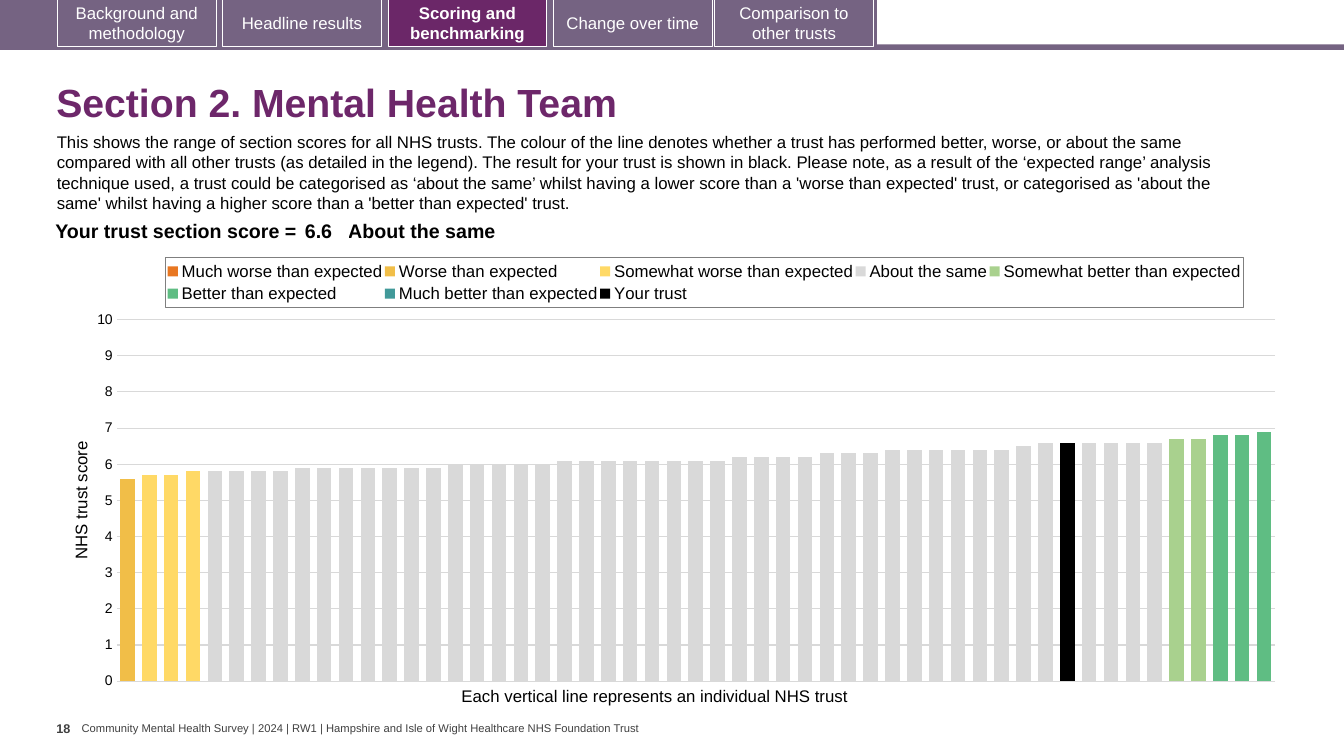
import copy

from pptx import Presentation
from pptx import util as u
from pptx.chart.data import CategoryChartData
from pptx.dml.color import RGBColor
from pptx.enum import chart as kinds, shapes, text
from pptx.oxml import parse_xml
from pptx.oxml.ns import nsdecls

COLUMNS, ROWS = 160, 90
CELL = u.Inches(13.33) / COLUMNS
LEFT, CENTRE, RIGHT = text.PP_ALIGN.LEFT, text.PP_ALIGN.CENTER, text.PP_ALIGN.RIGHT
TOP, MIDDLE = text.MSO_ANCHOR.TOP, text.MSO_ANCHOR.MIDDLE
TABS = {"Background and methodology": 6.84, "Headline results": 26.52, "Scoring and benchmarking": 46.2,
        "Change over time": 65.88, "Comparison to other trusts": 85.08}
ACTIVE_TAB = "Scoring and benchmarking"
INTRO = (
    "This shows the range of section scores for all NHS trusts. The colour of the line denotes whether a trust "
    "has performed better, worse, or about the same compared with all other trusts (as detailed in the legend). "
    "The result for your trust is shown in black. Please note, as a result of the ‘expected range’ analysis "
    "technique used, a trust could be categorised as ‘about the same’ whilst having a lower score than a 'worse "
    "than expected' trust, or categorised as 'about the same' whilst having a higher score than a 'better than "
    "expected' trust.")
TRUSTS = 53
BANDS = [
    ("Much worse than expected", "E87722", 0, []),
    ("Worse than expected", "F1BE48", 0, [(5.6, 1)]),
    ("Somewhat worse than expected", "FFD966", 1, [(5.7, 2), (5.8, 1)]),
    ("About the same", "D9D9D9", 4, [(5.8, 4), (5.9, 7), (6, 5), (6.1, 8), (6.2, 4), (6.3, 3),
                                     (6.4, 6), (6.5, 1), (6.6, 6)]),
    ("Somewhat better than expected", "A9D18E", 48, [(6.7, 2)]),
    ("Better than expected", "5FBD83", 50, [(6.8, 2), (6.9, 1)]),
    ("Much better than expected", "419999", 53, []),
    ("Your trust", "000000", 43, [(6.6, 1)]),
]


def colour(value):
    """Turn a hex string into a colour."""
    return RGBColor.from_string(value)


def place(box, left, top, width, height):
    """Convert grid lengths inside a box to slide lengths."""
    return [u.Emu(round(n * CELL)) for n in (box[0] + left, box[1] + top, width, height)]


def style(font, size, shade="000000", bold=False):
    """Set a font's face, size, colour and weight."""
    font.name, font.size, font.bold = "Arial", u.Pt(size), bold
    font.color.rgb = colour(shade)


def write(frame, words, size=12, shade="000000", bold=False, align=LEFT, anchor=TOP, wrap=True,
          insets=(0.1, 0.05), spacing=None):
    """Fill a text frame with one formatted paragraph."""
    frame.word_wrap, frame.vertical_anchor = wrap, anchor
    frame.margin_left = frame.margin_right = u.Inches(insets[0])
    frame.margin_top = frame.margin_bottom = u.Inches(insets[1])
    para = frame.paragraphs[0]
    para.alignment, para.line_spacing = align, spacing
    span = para.add_run()
    span.text = words
    style(span.font, size, shade, bold)


def add_text(page, area, words, **format):
    """Add a text box."""
    write(page.shapes.add_textbox(*area).text_frame, words, **format)


def add_bar(page, area, fill):
    """Add a flat rectangle without an outline."""
    bar = page.shapes.add_shape(shapes.MSO_SHAPE.RECTANGLE, *area)
    bar.shadow.inherit = False
    bar.fill.solid()
    bar.fill.fore_color.rgb = colour(fill)
    bar.line.fill.background()
    return bar


def draw_header(page, box):
    """Draw the navigation band with its tabs."""
    add_bar(page, place(box, 0, 5.28, box[2], 0.66), "756382")
    add_bar(page, place(box, 0, 0, 104.4, 5.64), "756382")
    for words, left in TABS.items():
        active = words == ACTIVE_TAB
        tab = add_bar(page, place(box, left, -0.12, 18.9, 5.64), "6B2768" if active else "756382")
        tab.line.color.rgb, tab.line.width = colour("FFFFFF"), u.Pt(0.75)
        write(tab.text_frame, words, shade="FFFFFF", bold=active, align=CENTRE, anchor=MIDDLE)


def draw_heading(page, box):
    """Draw the title and the introduction."""
    add_text(page, place(box, 0, 0, box[2], 8.64), "Section 2. Mental Health Team", size=28,
             shade="6D276A", bold=True, anchor=MIDDLE, spacing=0.9)
    add_text(page, place(box, 0.06, 6.96, 145.56, 10.92), INTRO)


def draw_score(page, box):
    """Draw the one-row table with the section score."""
    table = page.shapes.add_table(1, 3, *place(box, 0, 0, box[2], box[3])).table
    table.first_row = table.horz_banding = False
    parts = [(31.56, "Your trust section score =", RIGHT, 0.04), (5.64, "6.6", LEFT, 0.04),
             (103.08, "About the same", LEFT, 0)]
    for column, cell, (width, words, align, inset) in zip(table.columns, table.iter_cells(), parts):
        column.width = round(width * CELL)
        cell.fill.background()
        write(cell.text_frame, words, size=14, bold=True, align=align)
        cell.margin_left = cell.margin_right = u.Inches(inset)
        cell.margin_top = cell.margin_bottom = u.Inches(0.04)


def score_data():
    """Build the scores, one category per trust and one series per band."""
    data = CategoryChartData(number_format="0.0")
    data.categories = [str(n + 1) for n in range(TRUSTS)]
    for name, _, start, runs in BANDS:
        scores = [score for score, count in runs for _ in range(count)]
        data.add_series(name, [None] * start + scores + [None] * (TRUSTS - start - len(scores)))
    return data


def layout(x, y, w, h, target=""):
    """Build a manual chart layout from shares of the chart."""
    return parse_xml(
        f'<c:layout {nsdecls("c")}><c:manualLayout>{target}<c:xMode val="edge"/><c:yMode val="edge"/>'
        f'<c:x val="{x}"/><c:y val="{y}"/><c:w val="{w}"/><c:h val="{h}"/></c:manualLayout></c:layout>')


def add_right_axis(area):
    """Move the last series to a bar group with its own hidden axes."""
    bars, axes = area.find("{*}barChart"), [area.find("{*}catAx"), area.find("{*}valAx")]
    group = copy.deepcopy(bars)
    for series in group.findall("{*}ser")[:-1]:
        group.remove(series)
    bars.remove(bars.findall("{*}ser")[-1])
    bars.addnext(group)
    fresh = {axis.find("{*}axId").get("val"): str(5001 + n) for n, axis in enumerate(axes)}
    twins = [copy.deepcopy(axis) for axis in axes]
    for part in [group] + twins:
        for link in part.findall("{*}axId") + part.findall("{*}crossAx"):
            link.set("val", fresh[link.get("val")])
    value = twins[1]
    for tag in ("majorGridlines", "title"):
        value.remove(value.find("{*}" + tag))
    for tag, setting in (("axPos", "r"), ("majorTickMark", "out"), ("tickLblPos", "none"), ("crosses", "max")):
        value.find("{*}" + tag).set("val", setting)
    axes[1].addnext(twins[0])
    twins[0].addnext(value)


def draw_benchmark(page, box):
    """Draw the chart of all trusts, its legend and its caption."""
    chart = page.shapes.add_chart(kinds.XL_CHART_TYPE.COLUMN_CLUSTERED, *place(box, 0, 0, *box[2:]), score_data()).chart
    style(chart.font, 10)
    chart.has_title, chart.has_legend = False, True
    plot, axis, legend = chart.plots[0], chart.value_axis, chart.legend
    plot.gap_width, plot.overlap, plot.vary_by_categories = 50, 100, False
    for series, band in zip(plot.series, BANDS):
        series.format.fill.solid()
        series.format.fill.fore_color.rgb = colour(band[1])
    chart.category_axis.visible = False
    axis.minimum_scale, axis.maximum_scale, axis.major_unit = 0, 10, 1
    axis.major_tick_mark, axis.tick_label_position = kinds.XL_TICK_MARK.NONE, kinds.XL_TICK_LABEL_POSITION.NEXT_TO_AXIS
    axis.format.line.fill.background()
    grid = axis.major_gridlines.format.line
    grid.color.rgb, grid.width = colour("D9D9D9"), u.Pt(0.75)
    axis.tick_labels.number_format, axis.tick_labels.number_format_is_linked = "0", False
    style(axis.tick_labels.font, 10)
    span = axis.axis_title.text_frame.paragraphs[0].add_run()
    span.text = "NHS trust score"
    style(span.font, 12)
    legend.position, legend.include_in_layout = kinds.XL_LEGEND_POSITION.TOP, False
    style(legend.font, 12)
    key, area = chart.element.chart.find("{*}legend"), chart.element.chart.plotArea
    for owner in (key, area):
        for old in owner.findall("{*}layout"):
            owner.remove(old)
    key.find("{*}legendPos").addnext(layout(0.08, 0.02, 0.88, 0.11))
    key.find("{*}txPr").addprevious(parse_xml(
        f'<c:spPr {nsdecls("c", "a")}><a:ln w="9525"><a:solidFill><a:srgbClr val="7F7F7F"/></a:solidFill></a:ln></c:spPr>'))
    area.insert(0, layout(0.04, 0.158, 0.946, 0.808, '<c:layoutTarget val="inner"/>'))
    add_right_axis(area)
    add_text(page, place(box, 45.72, 51.36, 49.32, 3.6), "Each vertical line represents an individual NHS trust", wrap=False)


def draw_footer(page, box):
    """Draw the page number and the survey name."""
    add_text(page, place(box, 0, 0, 3, box[3]), "18", size=9, shade="404040", bold=True, wrap=False, insets=(0, 0.05))
    add_text(page, place(box, 3, 0.72, 67.2, 1.56), "Community Mental Health Survey | 2024 | RW1 | Hampshire and "
             "Isle of Wight Healthcare NHS Foundation Trust", size=8, shade="404040", wrap=False, anchor=MIDDLE, insets=(0, 0))


if __name__ == "__main__":
    deck = Presentation()
    deck.slide_width, deck.slide_height = round(COLUMNS * CELL), round(ROWS * CELL)
    slide = deck.slides.add_slide(deck.slide_layouts[6])
    draw_header(slide, (0, 0, 160, 5.88))
    draw_heading(slide, (5.52, 8.16, 149.88, 17.88))
    draw_score(slide, (4.26, 25.8, 140.28, 3.72))
    draw_benchmark(slide, (8.04, 29.64, 145.8, 53.28))
    draw_footer(slide, (6.72, 85.2, 70.2, 4.8))
    deck.save("out.pptx")
